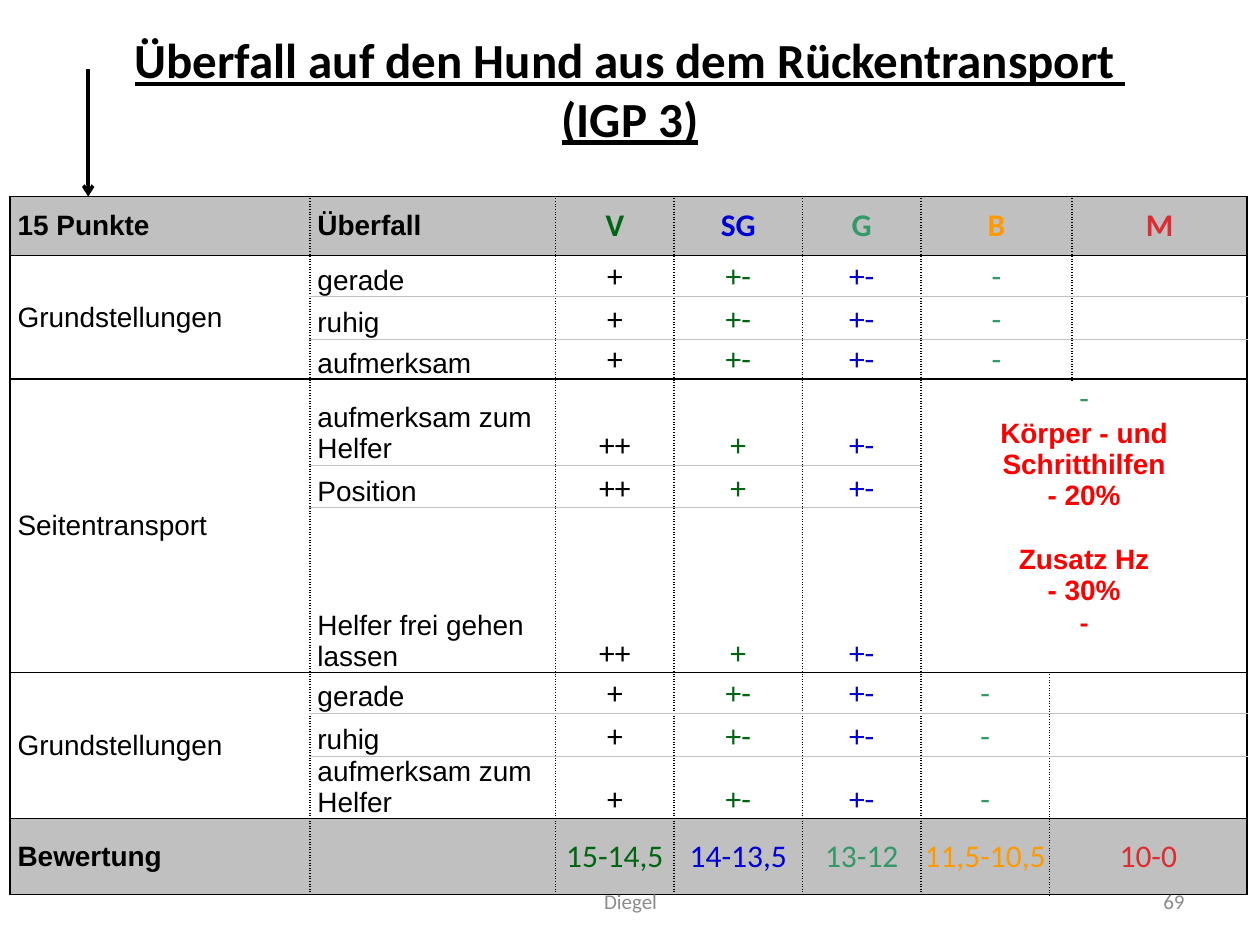
from dataclasses import dataclass

from lxml.etree import SubElement
from pptx import Presentation
from pptx.dml.color import RGBColor
from pptx.enum.shapes import MSO_CONNECTOR
from pptx.enum.text import MSO_ANCHOR, PP_ALIGN
from pptx.oxml.ns import qn
from pptx.util import Inches, Pt


@dataclass(frozen=True)
class Theme:
    ink: str = "000000"
    band: str = "C0C0C0"
    muted: str = "8C8C8C"
    alert: str = "FF0000"
    grades: tuple = ("006411", "0000D4", "339966", "FF9900", "DD2D32")
    label_font: str = "Arial"
    mark_font: str = "Calibri"
    title_size: int = 28
    mark_size: int = 18
    label_size: int = 16
    small_size: int = 12


THEME = Theme()
ROWS_PER_SLIDE, COLS_PER_SLIDE = 75, 100  # layout grid

# Table content: widths and heights in grid units
WIDTHS = [23.8, 19.5, 9.4, 10.2, 9.4, 10.2, 1.8, 13.9]
HEIGHTS = [4.7, 3.2, 3.4, 3.2, 6.8, 3.4, 13.1, 3.2, 3.4, 5, 6]
SECTION_EDGES = {0, 1, 4, 7, 10, 11}
BAND_ROWS = (0, 10)
MERGES = [(row, 0, row + 2, 0) for row in (1, 4, 7)]
MERGES += [(row, 5, row, 6) for row in range(4)]
MERGES += [(row, 6, row, 7) for row in range(7, 11)]
MERGES += [(4, 5, 6, 7)]
SECTIONS = {0: "15 Punkte", 1: "Grundstellungen", 4: "Seitentransport",
            7: "Grundstellungen", 10: "Bewertung"}
CRITERIA = [["Überfall"], ["gerade"], ["ruhig"], ["aufmerksam"],
            ["aufmerksam zum", "Helfer"], ["Position"],
            ["Helfer frei gehen", "lassen"], ["gerade"], ["ruhig"],
            ["aufmerksam zum", "Helfer"]]
BASIC = ["+", "+-", "+-", "-"]
TRANSPORT = ["++", "+", "+-"]
MARKS = ([["V", "SG", "G", "B", "M"]] + [BASIC] * 3 + [TRANSPORT] * 3
         + [BASIC] * 3 + [["15-14,5", "14-13,5", "13-12", "11,5-10,5", "10-0"]])
NOTES = ["Körper - und Schritthilfen", "- 20%", "Zusatz Hz", "- 30%"]


class SlideBuilder:
    def __init__(self, prs, theme):
        self.theme = theme
        self.unit_x = prs.slide_width / COLS_PER_SLIDE
        self.unit_y = prs.slide_height / ROWS_PER_SLIDE
        self.s = prs.slides.add_slide(prs.slide_layouts[5])

    def box(self, x, y, w, h):
        return (self.x(x), self.y(y), self.x(w), self.y(h))

    def x(self, cols):
        return int(cols * self.unit_x)

    def y(self, rows):
        return int(rows * self.unit_y)

    def add_lines(self, tf, lines, align=PP_ALIGN.LEFT, color=None, **font):
        """Fill a text frame, one paragraph per line."""
        for i, line in enumerate(lines):
            p = tf.paragraphs[0] if i == 0 else tf.add_paragraph()
            self.add_run(p, line, align, color, **font)

    def add_run(self, p, text, align, color=None, **font):
        p.alignment = align
        r = p.add_run()
        r.text = text
        for name, value in font.items():
            setattr(r.font, name, value)
        r.font.color.rgb = RGBColor.from_string(color or self.theme.ink)

    def label_style(self, **extra):
        return dict(name=self.theme.label_font, size=Pt(self.theme.label_size), **extra)

    def mark_style(self, **extra):
        return dict(name=self.theme.mark_font, size=Pt(self.theme.mark_size), **extra)

    def title(self, lines, *place):
        sp = self.s.shapes.title
        sp.left, sp.top, sp.width, sp.height = self.box(*place)
        tf = sp.text_frame
        tf.vertical_anchor = MSO_ANCHOR.MIDDLE
        self.add_lines(tf, lines, PP_ALIGN.CENTER, name=self.theme.mark_font,
                       size=Pt(self.theme.title_size), bold=True, underline=True)

    def text(self, line, align, *place):
        tf = self.s.shapes.add_textbox(*self.box(*place)).text_frame
        tf.word_wrap = True
        tf.vertical_anchor = MSO_ANCHOR.MIDDLE
        self.add_lines(tf, [line], align, self.theme.muted, name=self.theme.mark_font,
                       size=Pt(self.theme.small_size))

    def arrow(self, x1, y1, x2, y2):
        line = self.s.shapes.add_connector(
            MSO_CONNECTOR.STRAIGHT, self.x(x1), self.y(y1), self.x(x2), self.y(y2))
        line.line.color.rgb = RGBColor.from_string(self.theme.ink)
        line.line.width = Pt(2)
        props = line.element.spPr
        SubElement(props.find(qn("a:ln")), qn("a:tailEnd"), type="arrow")
        SubElement(props, qn("a:effectLst"))

    def table(self, x, y, widths, heights, merges):
        place = self.box(x, y, sum(widths), sum(heights))
        table = self.s.shapes.add_table(len(heights), len(widths), *place).table
        table.first_row = table.horz_banding = False
        for column, width in zip(table.columns, widths):
            column.width = self.x(width)
        for row, height in zip(table.rows, heights):
            row.height = self.y(height)
        for top, left, bottom, right in merges:
            table.cell(top, left).merge(table.cell(bottom, right))
        return table

    def border(self, cell, side, color, width, dash="solid"):
        ln = SubElement(cell._tc.get_or_add_tcPr(), qn(f"a:ln{side}"), w=str(Pt(width)))
        fill = SubElement(ln, qn("a:solidFill"))
        SubElement(fill, qn("a:srgbClr"), val=color)
        SubElement(ln, qn("a:prstDash"), val=dash)

    def style_cell(self, cell, row, col, last_col):
        t = self.theme
        right = col + (cell.span_width if cell.is_merge_origin else 1)
        bottom = row + (cell.span_height if cell.is_merge_origin else 1)
        for side, edge in (("L", col), ("R", right)):
            outer = edge in (0, last_col)
            self.border(cell, side, t.ink, 1, "solid" if outer else "sysDot")
        for side, edge in (("T", row), ("B", bottom)):
            rule = (t.ink, 1) if edge in SECTION_EDGES else (t.band, 0.25)
            self.border(cell, side, *rule)
        band = row in BAND_ROWS
        if band:
            cell.fill.solid()
            cell.fill.fore_color.rgb = RGBColor.from_string(t.band)
        else:
            cell.fill.background()
        format_values = dict(
            margin_left=Inches(0.06) if col < 2 else 0, margin_right=0,
            margin_top=0, margin_bottom=0,
            vertical_anchor=MSO_ANCHOR.MIDDLE if band or col == 0 else MSO_ANCHOR.BOTTOM)
        for name, value in format_values.items():
            setattr(cell, name, value)

    def score_table(self, x, y):
        t = self.theme
        table = self.table(x, y, WIDTHS, HEIGHTS, MERGES)
        for row in range(len(HEIGHTS)):
            for col in range(len(WIDTHS)):
                if not table.cell(row, col).is_spanned:
                    self.style_cell(table.cell(row, col), row, col, len(WIDTHS))
        # Section names and criteria
        for row, name in SECTIONS.items():
            self.add_lines(table.cell(row, 0).text_frame, [name],
                           **self.label_style(bold=row in BAND_ROWS))
        for row, lines in enumerate(CRITERIA):
            self.add_lines(table.cell(row, 1).text_frame, lines,
                           **self.label_style(bold=row == 0))
        # Marks: body colours run one grade behind the heading
        for row, marks in enumerate(MARKS):
            colors = t.grades if row in BAND_ROWS else (t.ink,) + t.grades
            cells = [table.cell(row, col) for col in range(2, len(WIDTHS))]
            cells = [cell for cell in cells if not cell.is_spanned]
            for cell, mark, color in zip(cells, marks, colors):
                self.add_lines(cell.text_frame, [mark], PP_ALIGN.CENTER, color,
                               **self.mark_style(bold=row == 0))
        self.deductions(table.cell(4, 5))

    def deductions(self, cell):
        t = self.theme
        cell.margin_bottom = Inches(0.25)
        tf = cell.text_frame
        self.add_lines(tf, ["-"], PP_ALIGN.CENTER, t.grades[2], **self.mark_style())
        style = self.label_style(bold=True)
        for note in NOTES:
            self.add_run(tf.add_paragraph(), note, PP_ALIGN.CENTER, t.alert, **style)
        tf.paragraphs[3].space_before = Pt(19)
        style["name"] = t.mark_font
        self.add_run(tf.add_paragraph(), "-", PP_ALIGN.CENTER, t.alert, **style)


def main():
    prs = Presentation()
    prs.slide_width, prs.slide_height = Inches(10), Inches(7.5)
    slide = SlideBuilder(prs, THEME)
    slide.title(["Überfall auf den Hund aus dem Rückentransport ", "(IGP 3)"],
                5, 0, 90, 14.1)
    slide.score_table(0.8, 15.6)
    slide.arrow(7, 5.5, 7, 15.6)
    # Footer
    slide.text("69", PP_ALIGN.RIGHT, 71.7, 69.5, 23.3, 4)
    slide.text("Diegel", PP_ALIGN.CENTER, 34.2, 69.5, 31.7, 4)
    prs.save("out.pptx")


if __name__ == "__main__":
    main()
